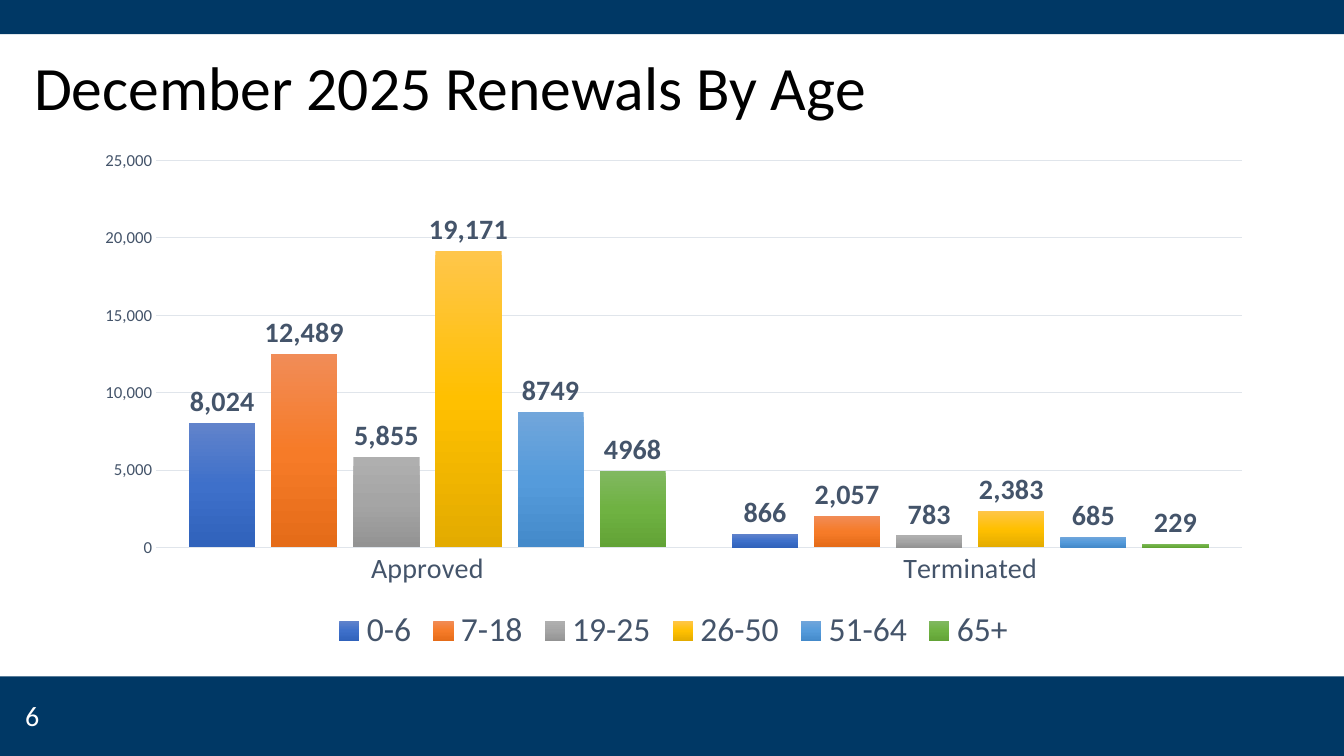
from dataclasses import dataclass
from lxml.etree import SubElement
from pptx import Presentation
from pptx.chart.data import CategoryChartData as ChartData
from pptx.dml.color import RGBColor as Color
from pptx.enum.chart import XL_CHART_TYPE as Kind
from pptx.enum.chart import XL_LABEL_POSITION as Spot
from pptx.enum.chart import XL_LEGEND_POSITION as Side
from pptx.enum.chart import XL_TICK_MARK as Tick
from pptx.enum.shapes import MSO_SHAPE as Shape
from pptx.enum.text import MSO_ANCHOR as Anchor
from pptx.oxml.ns import qn
from pptx.util import Pt

PX = 9144


@dataclass(frozen=True)
class Theme:
    face: str = "Calibri"
    navy: str = "003865"
    black: str = "000000"
    white: str = "FFFFFF"
    slate: str = "44546A"
    rule: str = "E0E5EB"
    head: int = 44
    key: int = 24
    body: int = 20
    tick: int = 12
    base: int = 10


@dataclass(frozen=True)
class Box:
    left: int
    top: int
    width: int
    height: int

    def emu(self) -> tuple[int, ...]:
        return tuple(n * PX for n in (self.left, self.top, self.width, self.height))


@dataclass(frozen=True)
class Group:
    name: str
    counts: tuple[int, int]
    shades: tuple[str, str, str]
    form: str = "#,##0"


THEME = Theme()
WIDE, HIGH = 1333, 750
BANDS = (Box(0, 0, WIDE, 34), Box(0, 671, WIDE, 79))
STATES = ("Approved", "Terminated")
GROUPS = (
    Group("0-6", (8024, 866), ("6183CB", "3E70CA", "3062BB")),
    Group("7-18", (12489, 2057), ("F18C57", "F67B28", "E56C19")),
    Group("19-25", (5855, 783), ("AFAFAF", "A5A5A5", "939393")),
    Group("26-50", (19171, 2383), ("FFC64B", "FFC000", "E3AB00")),
    Group("51-64", (8749, 685), ("71A6DB", "559BDB", "448ACA"), "General"),
    Group("65+", (4968, 229), ("81B861", "6FB242", "62A336"), "General"),
)


def style(font, size: int, color: str, bold: bool = False) -> None:
    font.name = THEME.face
    font.size = Pt(size)
    font.bold = bold
    font.color.rgb = Color.from_string(color)


def stroke(line) -> None:
    line.width = Pt(0.75)
    line.color.rgb = Color.from_string(THEME.rule)


def add_band(slide, box: Box) -> None:
    band = slide.shapes.add_shape(Shape.RECTANGLE, *box.emu())
    band.shadow.inherit = False
    band.fill.solid()
    band.fill.fore_color.rgb = Color.from_string(THEME.navy)
    band.line.fill.background()


def add_text(slide, box: Box, text: str, *, size: int, color: str,
             anchor: Anchor = Anchor.TOP, space: float = 1.0) -> None:
    frame = slide.shapes.add_textbox(*box.emu()).text_frame
    frame.word_wrap = True
    frame.vertical_anchor = anchor
    line = frame.paragraphs[0]
    line.line_spacing = space
    run = line.add_run()
    run.text = text
    style(run.font, size, color)


def shade(bar, shades: tuple[str, ...]) -> None:
    bar.format.fill.gradient()
    grad = bar._element.get_or_add_spPr().find(qn("a:gradFill"))
    stops = grad.find(qn("a:gsLst"))
    for stop in list(stops):
        stops.remove(stop)
    for i, color in enumerate(shades):
        stop = SubElement(stops, qn("a:gs"), pos=str(i * 50000))
        SubElement(stop, qn("a:srgbClr"), val=color)
    grad.find(qn("a:lin")).set("ang", "5400000")


def add_bar(bar, group: Group) -> None:
    shade(bar, group.shades)
    bar.invert_if_negative = False
    tags = bar.data_labels
    tags.show_value = True
    tags.position = Spot.OUTSIDE_END
    tags.number_format = group.form
    tags.number_format_is_linked = False
    style(tags.font, THEME.body, THEME.slate, bold=True)


def add_axes(chart) -> None:
    for axis, size in ((chart.category_axis, THEME.body), (chart.value_axis, THEME.tick)):
        axis.major_tick_mark = axis.minor_tick_mark = Tick.NONE
        style(axis.tick_labels.font, size, THEME.slate)
    stroke(chart.category_axis.format.line)
    scale = chart.value_axis
    scale.format.line.fill.background()
    scale.minimum_scale, scale.maximum_scale, scale.major_unit = 0, 25000, 5000
    stroke(scale.major_gridlines.format.line)
    scale.tick_labels.number_format = "#,##0"
    scale.tick_labels.number_format_is_linked = False


def add_chart(slide, box: Box) -> None:
    data = ChartData()
    data.categories = STATES
    for group in GROUPS:
        data.add_series(group.name, group.counts, group.form)
    chart = slide.shapes.add_chart(Kind.COLUMN_CLUSTERED, *box.emu(), data).chart
    chart.has_title = False
    style(chart.font, THEME.base, THEME.black)
    plot = chart.plots[0]
    plot.vary_by_categories = False
    plot.gap_width, plot.overlap = 100, -24
    for bar, group in zip(plot.series, GROUPS):
        add_bar(bar, group)
    add_axes(chart)
    chart.has_legend = True
    chart.legend.position = Side.BOTTOM
    chart.legend.include_in_layout = False
    style(chart.legend.font, THEME.key, THEME.slate)


def main() -> None:
    deck = Presentation()
    deck.slide_width, deck.slide_height = WIDE * PX, HIGH * PX
    slide = deck.slides.add_slide(deck.slide_layouts[6])
    for box in BANDS:
        add_band(slide, box)
    add_text(slide, Box(24, 17, 1150, 145), "December 2025 Renewals By Age",
             size=THEME.head, color=THEME.black, anchor=Anchor.MIDDLE, space=0.9)
    add_chart(slide, Box(81, 139, 1174, 514))
    add_text(slide, Box(15, 688, 300, 40), "6", size=THEME.body, color=THEME.white)
    deck.save("out.pptx")


if __name__ == "__main__":
    main()
